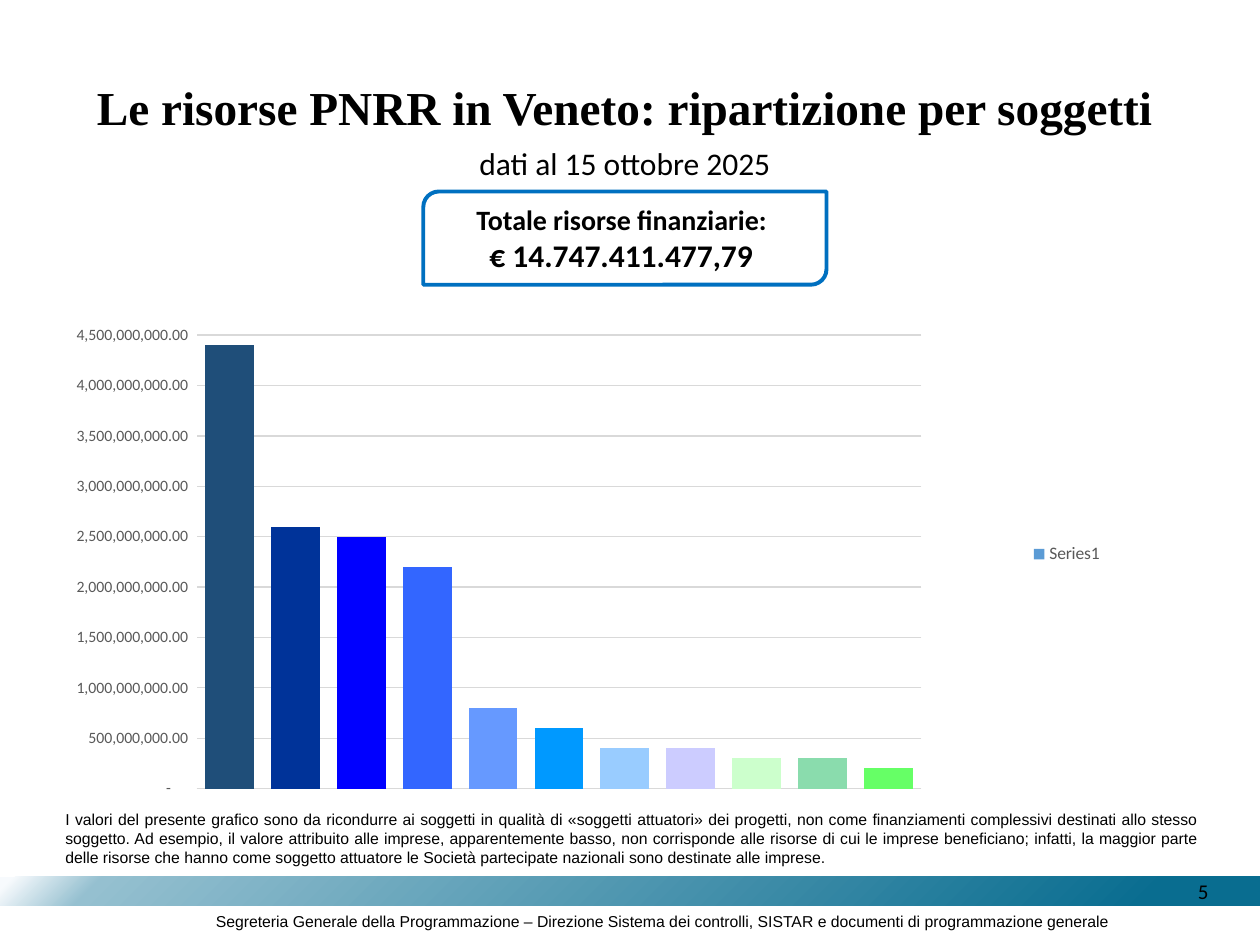
"""Build the slide on PNRR resources in Veneto by implementing body."""
from copy import deepcopy
from dataclasses import dataclass

from lxml import etree
from pptx import Presentation
from pptx.chart.data import CategoryChartData
from pptx.dml.color import RGBColor
from pptx.enum.chart import (XL_CHART_TYPE, XL_LEGEND_POSITION,
                             XL_TICK_LABEL_POSITION, XL_TICK_MARK)
from pptx.enum.shapes import MSO_SHAPE
from pptx.enum.text import MSO_ANCHOR, PP_ALIGN
from pptx.oxml.ns import qn
from pptx.util import Inches, Pt

COLUMN = XL_CHART_TYPE.COLUMN_CLUSTERED
RIGHT_KEY = XL_LEGEND_POSITION.RIGHT
NO_LABEL = XL_TICK_LABEL_POSITION.NONE
NO_TICK = XL_TICK_MARK.NONE
RECT, BADGE = MSO_SHAPE.RECTANGLE, MSO_SHAPE.ROUND_2_DIAG_RECTANGLE
TOP, MIDDLE = MSO_ANCHOR.TOP, MSO_ANCHOR.MIDDLE
CENTER, RIGHT, JUSTIFY = PP_ALIGN.CENTER, PP_ALIGN.RIGHT, PP_ALIGN.JUSTIFY

COLORS = {"ink": "000000", "paper": "FFFFFF", "edge": "0070C0",
          "label": "595959", "grid": "D9D9D9", "series": "5B9BD5"}
BAND = {0.01: "F7FAFD", 0.08: "95C0D0", 0.91: "096D90"}
BARS = [(4.4, "1F4E79"), (2.6, "003399"), (2.5, "0000FF"), (2.2, "3366FF"),
        (0.8, "6699FF"), (0.6, "0099FF"), (0.4, "99CCFF"), (0.4, "CCCCFF"),
        (0.3, "CCFFCC"), (0.3, "8ADCAD"), (0.2, "66FF66")]
BILLION = 10 ** 9
MONEY = '_(* #,##0.00_);_(* \\(#,##0.00\\);_(* "-"??_);_(@_)'
NOTE = (
    "I valori del presente grafico sono da ricondurre ai soggetti in qualità di "
    "«soggetti attuatori» dei progetti, non come finanziamenti complessivi "
    "destinati allo stesso soggetto. Ad esempio, il valore attribuito alle imprese, "
    "apparentemente basso, non corrisponde alle risorse di cui le imprese "
    "beneficiano; infatti, la maggior parte delle risorse che hanno come soggetto "
    "attuatore le Società partecipate nazionali sono destinate alle imprese.")
OFFICE = ("Segreteria Generale della Programmazione – Direzione Sistema dei "
          "controlli, SISTAR e documenti di programmazione generale")


@dataclass
class Line:
    """A paragraph and its type."""
    text: str
    size: float
    face: str = "Calibri"
    bold: bool = False
    align: PP_ALIGN = CENTER
    pitch: float = 1.0


@dataclass
class Label:
    """A text box with one line of text."""
    area: tuple
    line: Line
    anchor: MSO_ANCHOR = TOP


LABELS = [
    Label((0.26, 7.19, 9.99, 0.25), Line(OFFICE, 9, "Arial")),
    Label((0.27, 0.45, 9.47, 0.85),
          Line("Le risorse PNRR in Veneto: ripartizione per soggetti ", 27,
               "Times New Roman", True, pitch=0.9), MIDDLE),
    Label((7.44, 6.87, 2.25, 0.4), Line("5", 12, align=RIGHT), MIDDLE),
    Label((3.17, 1.09, 3.58, 0.4), Line("dati al 15 ottobre 2025", 18)),
    Label((0.42, 6.38, 9.18, 0.56), Line(NOTE, 9, "Arial", align=JUSTIFY)),
]
TOTAL = [Line("Totale risorse finanziarie: ", 16, bold=True),
         Line("€ 14.747.411.477,79 ", 18, bold=True)]


def place(area: tuple) -> list:
    """Turn an area into lengths."""
    return [Inches(side) for side in area]


def apply(target, values: dict) -> None:
    """Set each value on the target."""
    for name, value in values.items():
        setattr(target, name, value)


def paint(fill, color: str) -> None:
    """Give a fill one colour."""
    fill.solid()
    fill.fore_color.rgb = RGBColor.from_string(color)


def style(font, size: float, face: str, color: str, bold: bool = False) -> None:
    """Format a font."""
    apply(font, {"size": Pt(size), "name": face, "bold": bold})
    paint(font.fill, color)


def write(frame, lines: list, anchor: MSO_ANCHOR = TOP) -> None:
    """Fill a text frame with lines."""
    apply(frame, {"word_wrap": True, "vertical_anchor": anchor})
    for index, line in enumerate(lines):
        para = frame.add_paragraph() if index else frame.paragraphs[0]
        apply(para, {"text": line.text, "alignment": line.align,
                     "line_spacing": line.pitch})
        style(para.runs[0].font, line.size, line.face, COLORS["ink"], line.bold)


def draw_band(slide) -> None:
    """Draw the shaded band at the foot."""
    band = slide.shapes.add_shape(RECT, *place((0, 6.96, 10, 0.23)))
    band.shadow.inherit = False
    band.line.fill.background()
    band.fill.gradient()
    band.fill.gradient_angle = 315
    stops = band._element.spPr.find(qn("a:gradFill")).find(qn("a:gsLst"))
    stops.append(deepcopy(stops[-1]))
    for stop, (spot, color) in zip(band.fill.gradient_stops, BAND.items()):
        stop.position = spot
        stop.color.rgb = RGBColor.from_string(color)


def draw_total(slide) -> None:
    """Draw the framed total."""
    badge = slide.shapes.add_shape(BADGE, *place((3.36, 1.52, 3.2, 0.74)))
    badge.shadow.inherit = False
    paint(badge.fill, COLORS["paper"])
    paint(badge.line.fill, COLORS["edge"])
    badge.line.width = Pt(2.25)
    write(badge.text_frame, TOTAL)


def layout(values: dict):
    """Make a manual chart layout."""
    root = etree.Element(qn("c:layout"))
    manual = etree.SubElement(root, qn("c:manualLayout"))
    for name, value in values.items():
        etree.SubElement(manual, qn(f"c:{name}")).set("val", str(value))
    return root


def draw_chart(slide) -> None:
    """Draw the column chart of resources."""
    data = CategoryChartData(number_format=MONEY)
    data.categories = [str(index + 1) for index in range(len(BARS))]
    data.add_series("Series1", [round(value * BILLION) for value, _ in BARS])
    chart = slide.shapes.add_chart(
        COLUMN, *place((0.24, 1.94, 9.43, 4.5)), data).chart
    apply(chart, {"has_title": False, "has_legend": True})
    style(chart.font, 10, "Calibri", COLORS["ink"])
    apply(chart.legend, {"position": RIGHT_KEY, "include_in_layout": False})
    style(chart.legend.font, 10, "Calibri", COLORS["label"])

    plot = chart.plots[0]
    apply(plot, {"gap_width": 35, "vary_by_categories": False})
    bars = plot.series[0]
    paint(bars.format.fill, COLORS["series"])
    for index, (_, color) in enumerate(BARS):
        paint(bars.points[index].format.fill, color)

    cats, vals = chart.category_axis, chart.value_axis
    for axis in (cats, vals):
        apply(axis, {"major_tick_mark": NO_TICK, "minor_tick_mark": NO_TICK})
        style(axis.tick_labels.font, 9, "Calibri", COLORS["label"])
    cats.tick_label_position = NO_LABEL
    apply(vals, {"minimum_scale": 0, "maximum_scale": 4.5 * BILLION,
                 "major_unit": 0.5 * BILLION, "has_major_gridlines": True})
    apply(vals.tick_labels, {"number_format": MONEY,
                             "number_format_is_linked": False})
    vals.format.line.fill.background()
    for rule in (cats.format.line, vals.major_gridlines.format.line):
        paint(rule.fill, COLORS["grid"])
        rule.width = Pt(0.75)

    area = chart._chartSpace.chart.plotArea
    for old in area.findall(qn("c:layout")):
        area.remove(old)
    area.insert(0, layout({"layoutTarget": "inner", "xMode": "edge",
                           "yMode": "edge", "x": 0.14, "y": 0.16,
                           "w": 0.61, "h": 0.8}))
    key = chart.legend._element
    for old in key.findall(qn("c:layout")):
        key.remove(old)
    key.find(qn("c:legendPos")).addnext(
        layout({"xMode": "edge", "yMode": "edge", "x": 0.84, "y": 0.52}))


def main() -> None:
    """Build and save the slide."""
    deck = Presentation()
    apply(deck, {"slide_width": Inches(10), "slide_height": Inches(7.5)})
    slide = deck.slides.add_slide(deck.slide_layouts[6])
    draw_band(slide)
    for label in LABELS:
        box = slide.shapes.add_textbox(*place(label.area))
        write(box.text_frame, [label.line], label.anchor)
    draw_total(slide)
    draw_chart(slide)
    deck.save("out.pptx")


if __name__ == "__main__":
    main()
